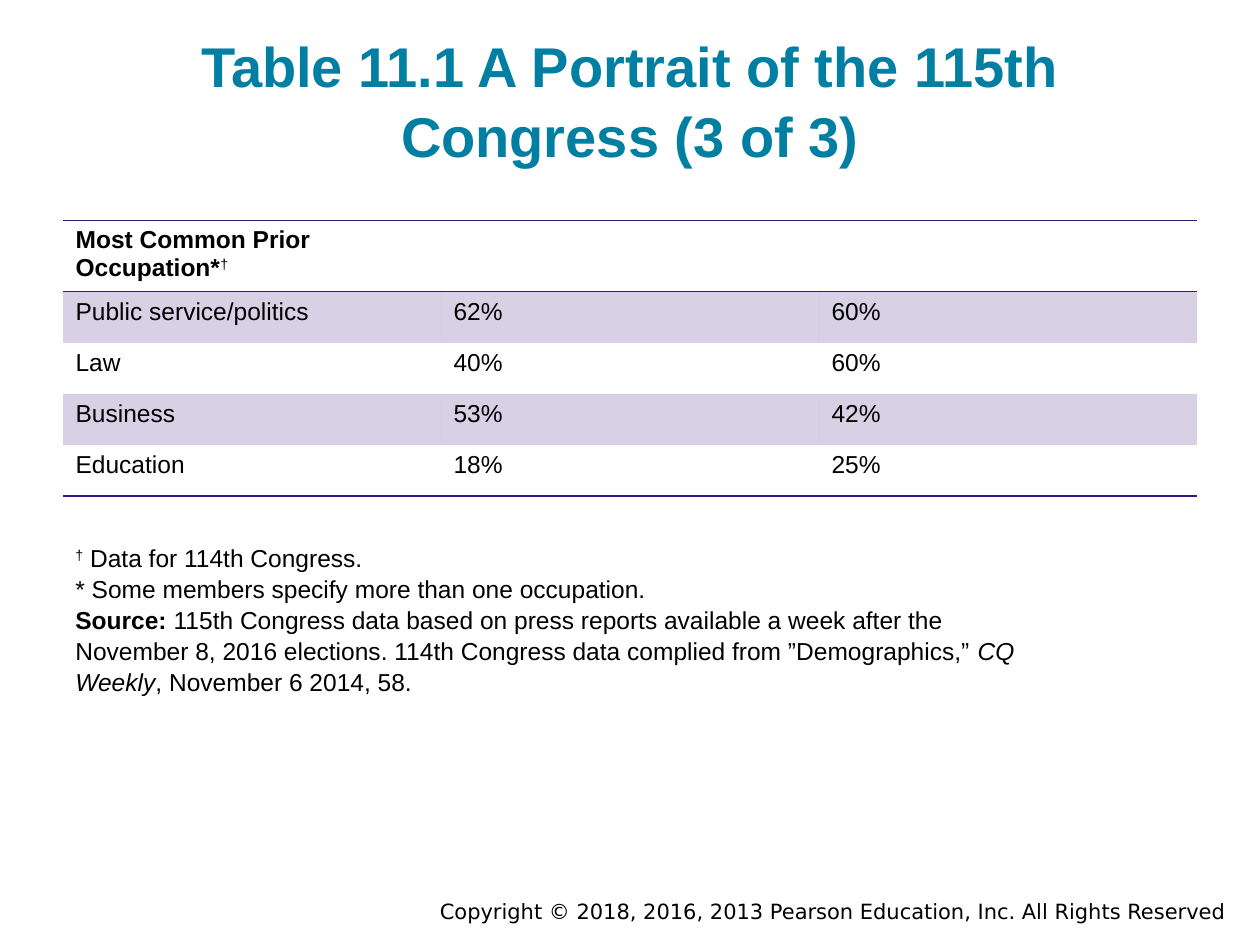
from lxml.etree import SubElement
from pptx import Presentation
from pptx.dml.color import RGBColor
from pptx.enum.text import MSO_ANCHOR, PP_ALIGN
from pptx.oxml import parse_xml
from pptx.oxml.ns import nsdecls, qn
from pptx.util import Cm, Pt

TEAL = RGBColor(0x00, 0x7F, 0xA3)
PURPLE = RGBColor(0x3C, 0x15, 0x81)
BLACK = RGBColor(0x00, 0x00, 0x00)
BODY_FONT = "Arial"
FOOTER_FONT = "DejaVu Sans"
NO_STYLE = "{2D5ABB26-0587-4C30-8999-92F81FD0307C}"

HEADING = [("Most Common Prior Occupation*", "bold"), ("†", "superscript")]
OCCUPATIONS = [
    ("Public service/politics", "62%", "60%"),
    ("Law", "40%", "60%"),
    ("Business", "53%", "42%"),
    ("Education", "18%", "25%"),
]
NOTES = [
    [("†", "superscript"), (" Data for 114th Congress.", None)],
    [("* Some members specify more than one occupation.", None)],
    [
        ("Source: ", "bold"),
        ("115th Congress data based on press reports available a week after the "
         "November 8, 2016 elections. 114th Congress data complied from ”Demographics,” ", None),
        ("CQ Weekly", "italic"),
        (", November 6 2014, 58.", None),
    ],
]


def set_font(paragraph, size, color=BLACK, name=BODY_FONT):
    paragraph.font.name = name
    paragraph.font.size = Pt(size)
    paragraph.font.color.rgb = color


def add_runs(paragraph, pieces):
    set_font(paragraph, 14)
    for text, style in pieces:
        run = paragraph.add_run()
        run.text = text
        if style == "bold":
            run.font.bold = True
        elif style == "italic":
            run.font.italic = True
        elif style == "superscript":
            run.font._element.set("baseline", "30000")


def set_borders(cell, sides):
    """Draw 1 pt lines on the given sides, in the order T, B."""
    properties = cell._tc.get_or_add_tcPr()
    for position, side in enumerate(sides):
        properties.insert(position, parse_xml(
            f'<a:ln{side} {nsdecls("a")} w="12700"><a:solidFill>'
            f'<a:srgbClr val="{PURPLE}"/></a:solidFill></a:ln{side}>'))


def shade(cell):
    cell.fill.solid()
    cell.fill.fore_color.rgb = PURPLE
    color = cell._tc.tcPr.find(qn("a:solidFill")).find(qn("a:srgbClr"))
    SubElement(color, qn("a:alpha")).set("val", "20000")


def place_title(slide, left, top, width, height):
    title = slide.shapes.title
    title.left, title.top, title.width, title.height = left, top, width, height
    frame = title.text_frame
    frame.text = "Table 11.1 A Portrait of the 115th Congress (3 of 3)"
    frame.word_wrap = True
    frame.vertical_anchor = MSO_ANCHOR.BOTTOM
    frame.margin_left = frame.margin_right = Cm(0.25)
    frame.margin_top = frame.margin_bottom = Cm(0.25)
    heading = frame.paragraphs[0]
    heading.alignment = PP_ALIGN.CENTER
    heading.line_spacing = 1.05
    set_font(heading, 32, TEAL)
    heading.font.bold = True


def place_occupations(slide, left, top, width, height):
    row_count, column_count = len(OCCUPATIONS) + 1, len(OCCUPATIONS[0])
    frame = slide.shapes.add_table(row_count, column_count, left, top, width, height)
    frame._element.find(".//" + qn("a:tableStyleId")).text = NO_STYLE
    table = frame.table

    # The two-line heading row is taller than the equal rows below it
    heading_height = Cm(1.37)
    for row in table.rows:
        row.height = (height - heading_height) // len(OCCUPATIONS)
    table.rows[0].height = heading_height

    # Heading row
    add_runs(table.cell(0, 0).text_frame.paragraphs[0], HEADING)
    for cell in table.rows[0].cells:
        cell.fill.background()
        set_borders(cell, "TB")

    # Banded body rows
    for row_index, values in enumerate(OCCUPATIONS, start=1):
        for column, value in enumerate(values):
            cell = table.cell(row_index, column)
            add_runs(cell.text_frame.paragraphs[0], [(value, None)])
            if row_index % 2:
                shade(cell)
            else:
                cell.fill.background()
            if row_index == len(OCCUPATIONS):
                set_borders(cell, "B")


def place_notes(slide, left, top, width, height):
    frame = slide.shapes.add_textbox(left, top, width, height).text_frame
    frame.word_wrap = True
    for index, pieces in enumerate(NOTES):
        note = frame.add_paragraph() if index else frame.paragraphs[0]
        note.line_spacing = 1.05
        add_runs(note, pieces)


def place_copyright(slide, left, top, width, height):
    frame = slide.shapes.add_textbox(left, top, width, height).text_frame
    frame.word_wrap = True
    line = frame.paragraphs[0]
    line.text = "Copyright © 2018, 2016, 2013 Pearson Education, Inc. All Rights Reserved"
    line.alignment = PP_ALIGN.RIGHT
    set_font(line, 12, name=FOOTER_FONT)


def main():
    deck = Presentation()
    deck.slide_width, deck.slide_height = Cm(25.4), Cm(19.05)
    slide = deck.slides.add_slide(deck.slide_layouts.get_by_name("Title Only"))
    margin = Cm(1.27)
    place_copyright(slide, Cm(5.08), Cm(17.98), Cm(19.89), Cm(0.76))
    place_title(slide, margin, Cm(0.61), Cm(22.86), Cm(3.05))
    place_occupations(slide, margin, Cm(4.44), Cm(22.86), Cm(5.49))
    place_notes(slide, margin, Cm(10.8), Cm(20.32), Cm(3.25))
    deck.save("out.pptx")


if __name__ == "__main__":
    main()
